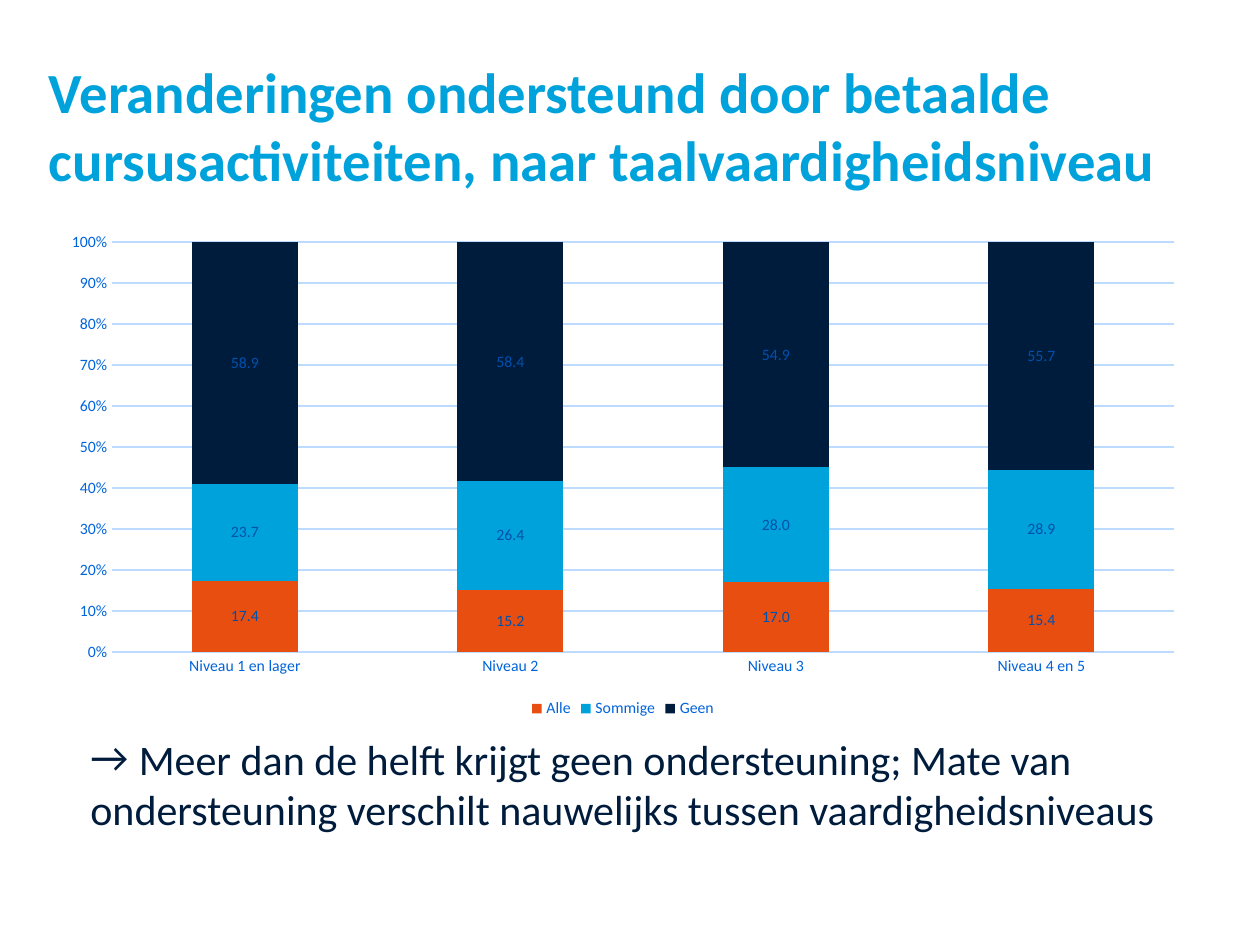
"""Build a slide with a stacked chart of course support by language level."""
from lxml import etree
from pptx import Presentation
from pptx.chart.data import CategoryChartData
from pptx.dml.color import RGBColor
from pptx.enum.chart import XL_CHART_TYPE, XL_LABEL_POSITION, XL_LEGEND_POSITION, XL_TICK_MARK
from pptx.oxml.ns import qn
from pptx.util import Pt

STACKED = XL_CHART_TYPE.COLUMN_STACKED_100
CENTER = XL_LABEL_POSITION.CENTER
BOTTOM = XL_LEGEND_POSITION.BOTTOM
NO_TICK = XL_TICK_MARK.NONE
SKY = RGBColor(0x00, 0xA2, 0xDB)
NAVY = RGBColor(0x00, 0x1C, 0x3D)
ORANGE = RGBColor(0xE8, 0x4E, 0x10)
BLUE = RGBColor(0x00, 0x64, 0xDA)
LABEL = RGBColor(0x00, 0x50, 0xAD)
PALE = RGBColor(0xBC, 0xDB, 0xFF)
FONT = "Calibri"
PX = 914400 / 126


def place(*px):
    return [round(n * PX) for n in px]


def style(font, size, color):
    font.name = FONT
    font.size = Pt(size)
    font.color.rgb = color


deck = Presentation()
deck.slide_width, deck.slide_height = place(1260, 945)
slide = deck.slides.add_slide(deck.slide_layouts[6])

frame = slide.shapes.add_textbox(*place(49, 57, 1148, 105)).text_frame
frame.word_wrap = True
frame.margin_left = frame.margin_right = frame.margin_top = frame.margin_bottom = 0
run = frame.paragraphs[0].add_run()
run.text = "Veranderingen ondersteund door betaalde cursusactiviteiten, naar taalvaardigheidsniveau"
style(run.font, 32.4, SKY)
run.font.bold = True

data = CategoryChartData(number_format="0.0")
data.categories = ["Niveau 1 en lager", "Niveau 2", "Niveau 3", "Niveau 4 en 5"]
data.add_series("Alle", [17.4, 15.2, 17.0, 15.4])
data.add_series("Sommige", [23.7, 26.4, 28.0, 28.9])
data.add_series("Geen", [58.9, 58.4, 54.9, 55.7])
chart = slide.shapes.add_chart(STACKED, *place(49, 223, 1148, 500), data).chart
style(chart.font, 10, NAVY)
chart.has_title = False
chart.has_legend = True
chart.legend.position = BOTTOM
chart.legend.include_in_layout = False
style(chart.legend.font, 9, BLUE)

levels, share = chart.category_axis, chart.value_axis
for axis in (levels, share):
    axis.major_tick_mark = axis.minor_tick_mark = NO_TICK
    style(axis.tick_labels.font, 9, BLUE)
share.has_major_gridlines = True
for line in (levels.format.line, share.major_gridlines.format.line):
    line.color.rgb = PALE
    line.width = Pt(0.75)
share.format.line.fill.background()
share.minimum_scale, share.maximum_scale, share.major_unit = 0, 1, 0.1
share.tick_labels.number_format = "0%"
share.tick_labels.number_format_is_linked = False

plot = chart.plots[0]
plot.gap_width = 150
plot.overlap = 100
plot.vary_by_categories = False
for series, color in zip(plot.series, (ORANGE, SKY, NAVY)):
    series.format.fill.solid()
    series.format.fill.fore_color.rgb = color
    labels = series.data_labels
    labels.show_value = True
    labels.position = CENTER
    labels.number_format = "0.0"
    labels.number_format_is_linked = False
    style(labels.font, 9, LABEL)

frame = slide.shapes.add_textbox(*place(78, 727, 1148, 115)).text_frame
frame.word_wrap = True
first, second = frame.paragraphs[0], frame.add_paragraph()
props = first._p.get_or_add_pPr()
indent = round(39 * PX)
props.set("marL", str(indent))
props.set("indent", str(-indent))
etree.SubElement(props, qn("a:buFont"), typeface=FONT)
etree.SubElement(props, qn("a:buChar"), char="→")
for para, text in (
    (first, " Meer dan de helft krijgt geen ondersteuning; Mate van"),
    (second, "ondersteuning verschilt nauwelijks tussen vaardigheidsniveaus"),
):
    run = para.add_run()
    run.text = text
    style(run.font, 24, NAVY)

deck.save("out.pptx")
